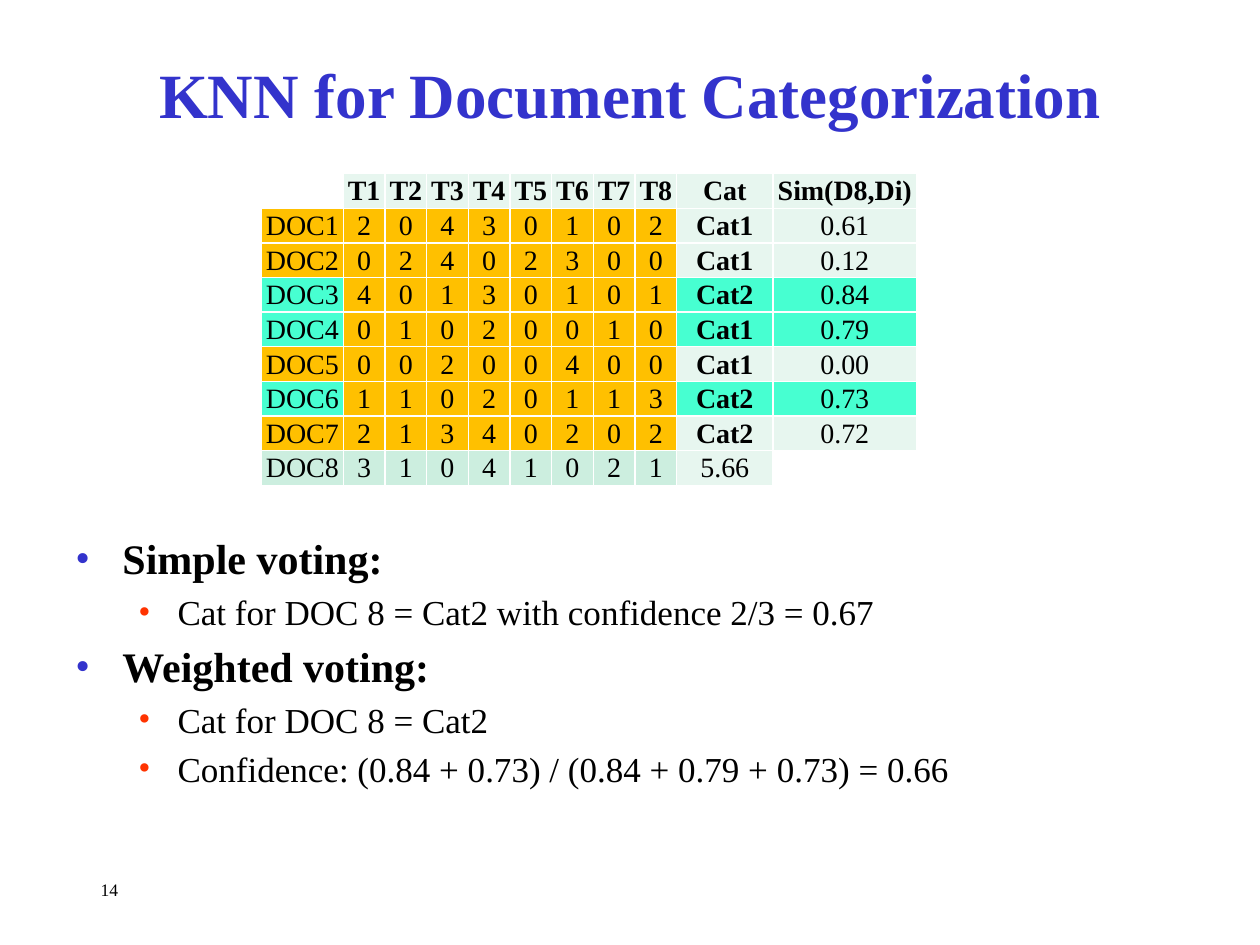
from lxml.etree import SubElement
from pptx import Presentation
from pptx.dml.color import RGBColor
from pptx.enum.text import MSO_ANCHOR, PP_ALIGN
from pptx.oxml.ns import qn
from pptx.util import Cm, Pt

COLORS = {
    "title": "3333CC",
    "text": "000000",
    "sub_bullet": "FF3300",
    "white": "FFFFFF",
    "pale": "E7F6EF",
    "query": "CCEEDF",
    "training": "FFC000",
    "neighbor": "47FFD1",
}
LEVELS = [
    {"size": 24, "bold": True, "margin": 0.95, "hanging": 0.95, "bullet": "title"},
    {"size": 20, "bold": False, "margin": 2.06, "hanging": 0.79, "bullet": "sub_bullet"},
]
VOTING = [
    (0, "Simple voting:"),
    (1, "Cat for DOC 8 = Cat2 with confidence 2/3 = 0.67"),
    (0, "Weighted voting:"),
    (1, "Cat for DOC 8 = Cat2"),
    (1, "Confidence: (0.84 + 0.73) / (0.84 + 0.79 + 0.73) = 0.66"),
]
TERM_COUNT = 8
CATEGORY_COLUMN = TERM_COUNT + 1
NEIGHBORS = {"DOC3", "DOC4", "DOC6"}
QUERY = "DOC8"
DOCUMENTS = [
    ["", *(f"T{number + 1}" for number in range(TERM_COUNT)), "Cat", "Sim(D8,Di)"],
    ["DOC1", *"20430102", "Cat1", "0.61"],
    ["DOC2", *"02402300", "Cat1", "0.12"],
    ["DOC3", *"40130101", "Cat2", "0.84"],
    ["DOC4", *"01020010", "Cat1", "0.79"],
    ["DOC5", *"00200400", "Cat1", "0.00"],
    ["DOC6", *"11020113", "Cat2", "0.73"],
    ["DOC7", *"21340202", "Cat2", "0.72"],
    [QUERY, *"31041021", "5.66", ""],
]
COLUMN_WIDTHS = [1.65] + [0.84] * TERM_COUNT + [1.94, 2.9]
ROW_HEIGHTS = [0.65] * (len(DOCUMENTS) - 1) + [0.7]


def cell_fill(name, column, value):
    if not value:
        return "white"
    if name == QUERY and column < CATEGORY_COLUMN:
        return "query"
    if name in NEIGHBORS and column in (0, CATEGORY_COLUMN, CATEGORY_COLUMN + 1):
        return "neighbor"
    if name and name != QUERY and column < CATEGORY_COLUMN:
        return "training"
    return "pale"


class SlideBuilder:
    def __init__(self, page, font="Times New Roman"):
        self.page = page
        self.font = font

    def apply(self, target, values):
        for name, value in values.items():
            setattr(target, name, value)

    def add_span(self, para, text, size, bold=False, color="text"):
        span = para.add_run()
        span.text = text
        self.apply(span.font, {"name": self.font, "size": Pt(size), "bold": bold})
        span.font.color.rgb = RGBColor.from_string(COLORS[color])

    def text_frame(self, left, top, width, height, anchor=MSO_ANCHOR.TOP):
        box = self.page.shapes.add_textbox(Cm(left), Cm(top), Cm(width), Cm(height))
        self.apply(box.text_frame, {"word_wrap": True, "vertical_anchor": anchor})
        return box.text_frame

    def title(self, text, *bounds):
        para = self.text_frame(*bounds, anchor=MSO_ANCHOR.MIDDLE).paragraphs[0]
        para.alignment = PP_ALIGN.CENTER
        self.add_span(para, text, 36, True, "title")

    def page_number(self, text, *bounds):
        self.add_span(self.text_frame(*bounds).paragraphs[0], text, 10)

    def bullets(self, items, *bounds):
        frame = self.text_frame(*bounds)
        for index, (level, text) in enumerate(items):
            para = frame.add_paragraph() if index else frame.paragraphs[0]
            para.level = level
            style = LEVELS[level]
            self.bullet(para, style)
            self.add_span(para, text, style["size"], style["bold"])

    def bullet(self, para, style):
        properties = para._p.get_or_add_pPr()
        properties.set("marL", str(Cm(style["margin"])))
        properties.set("indent", str(-Cm(style["hanging"])))
        spacing = SubElement(properties, qn("a:spcBef"))
        SubElement(spacing, qn("a:spcPct"), val="20000")
        color = SubElement(properties, qn("a:buClr"))
        SubElement(color, qn("a:srgbClr"), val=COLORS[style["bullet"]])
        SubElement(properties, qn("a:buFont"), typeface=self.font)
        SubElement(properties, qn("a:buChar"), char="•")

    def table(self, rows, left, top):
        frame = self.page.shapes.add_table(
            len(rows), len(COLUMN_WIDTHS), Cm(left), Cm(top),
            Cm(sum(COLUMN_WIDTHS)), Cm(sum(ROW_HEIGHTS)),
        )
        grid = frame.table
        for column, width in zip(grid.columns, COLUMN_WIDTHS):
            column.width = Cm(width)
        for row, height in zip(grid.rows, ROW_HEIGHTS):
            row.height = Cm(height)
        for row_index, values in enumerate(rows):
            for column, value in enumerate(values):
                is_category = column == CATEGORY_COLUMN and values[0] != QUERY
                self.cell(
                    grid.cell(row_index, column), value,
                    bold=row_index == 0 or is_category,
                    fill=cell_fill(values[0], column, value),
                )

    def cell(self, cell, text, bold, fill):
        self.apply(cell, {
            "margin_left": Cm(0.02),
            "margin_right": Cm(0.02),
            "margin_top": Cm(0.02),
            "margin_bottom": 0,
            "vertical_anchor": MSO_ANCHOR.MIDDLE,
        })
        para = cell.text_frame.paragraphs[0]
        para.alignment = PP_ALIGN.CENTER
        if text:
            self.add_span(para, text, 16, bold)
        else:
            SubElement(para._p, qn("a:endParaRPr"), sz="1600")
        properties = cell._tc.get_or_add_tcPr()
        for side in ("lnL", "lnR", "lnT", "lnB"):
            line = SubElement(properties, qn(f"a:{side}"), w=str(Pt(1)))
            paint = SubElement(line, qn("a:solidFill"))
            SubElement(paint, qn("a:srgbClr"), val=COLORS["white"])
        cell.fill.solid()
        cell.fill.fore_color.rgb = RGBColor.from_string(COLORS[fill])


def main():
    deck = Presentation()
    deck.slide_width, deck.slide_height = Cm(25.4), Cm(19.05)
    page = deck.slides.add_slide(deck.slide_layouts[6])
    builder = SlideBuilder(page)
    builder.title("KNN for Document Categorization", 1.9, 0.84, 21.6, 2.1)
    builder.bullets(VOTING, 1.27, 10.62, 22.86, 6.32)
    builder.page_number("14", 1.78, 17.6, 9.52, 0.64)
    builder.table(DOCUMENTS, 5.27, 3.5)
    deck.save("out.pptx")


if __name__ == "__main__":
    main()
